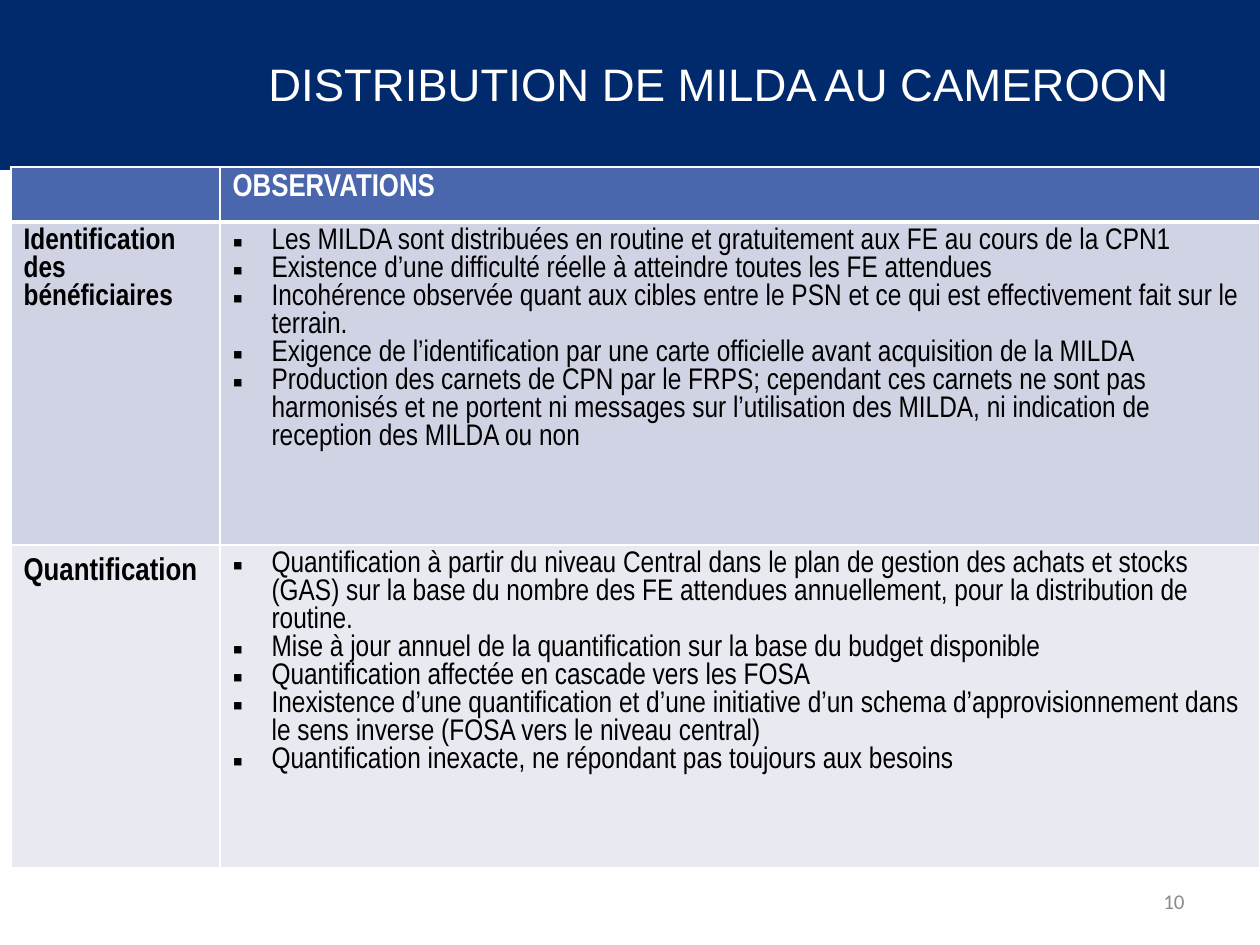
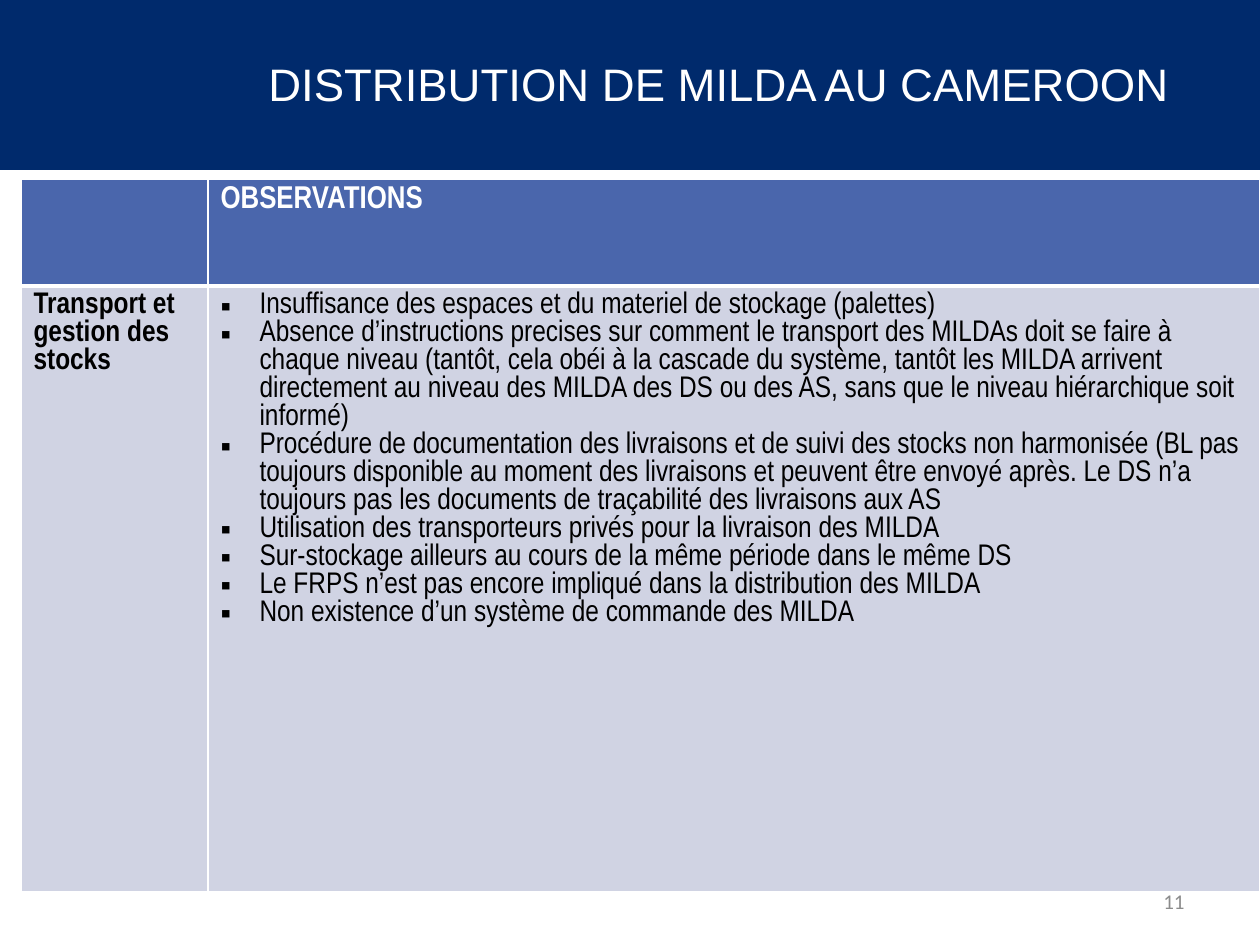
import pptx
import pptx.dml.color
import pptx.enum.shapes
import pptx.enum.text
import pptx.oxml.ns
import pptx.util
from lxml import etree

RGBColor = pptx.dml.color.RGBColor
PP_ALIGN = pptx.enum.text.PP_ALIGN

PX = 914400 // 126
SLIDE_WIDTH, SLIDE_HEIGHT = 1260, 945

NAVY = RGBColor(0x00, 0x2A, 0x6C)
HEADER_BLUE = RGBColor(0x4A, 0x66, 0xAC)
ROW_TINTS = (RGBColor(0xD0, 0xD3, 0xE3), RGBColor(0xE9, 0xEA, 0xF1))
WHITE = RGBColor(0xFF, 0xFF, 0xFF)
BLACK = RGBColor(0x00, 0x00, 0x00)
GREY = RGBColor(0x8C, 0x8C, 0x8C)

TITLE_FONT, TABLE_FONT, NUMBER_FONT = "Arial", "Arial Narrow", "Calibri"
TITLE = "DISTRIBUTION DE MILDA AU CAMEROON"
HEADING = "OBSERVATIONS"
HEADING_SIZE, BODY_SIZE = 18, 17
THIN, THICK = 1, 3
BULLET_INDENT = 39

# Each topic: label, label size, label top margin, observations
IDENTIFICATION = ("Identification des bénéficiaires", 17, 6, [
    "Les MILDA sont distribuées en routine et gratuitement aux FE au cours de la CPN1",
    "Existence d’une difficulté réelle à atteindre toutes les FE attendues",
    "Incohérence observée quant aux cibles entre le PSN et ce qui est effectivement "
    "fait sur le terrain.",
    "Exigence de l’identification par une carte officielle avant acquisition de la MILDA",
    "Production des carnets de CPN par le FRPS; cependant ces carnets ne sont pas "
    "harmonisés et ne portent ni messages sur l’utilisation des MILDA, ni indication de "
    "reception des MILDA ou non",
])
QUANTIFICATION = ("Quantification", 18, 13, [
    "Quantification à partir du niveau Central dans le plan de gestion des achats et "
    "stocks (GAS) sur la base du nombre des FE attendues annuellement, pour la "
    "distribution de routine.",
    "Mise à jour annuel de la quantification sur la base du budget disponible",
    "Quantification affectée en cascade vers les FOSA",
    "Inexistence d’une quantification et d’une initiative d’un schema "
    "d’approvisionnement dans le sens inverse (FOSA vers le niveau central)",
    "Quantification inexacte, ne répondant pas toujours aux besoins",
])
TRANSPORT = ("Transport et gestion des stocks", 17, 6, [
    "Insuffisance des espaces et du materiel de stockage (palettes)",
    "Absence d’instructions precises sur comment le transport des MILDAs doit se faire "
    "à chaque niveau (tantôt, cela obéi à la cascade du système, tantôt les MILDA "
    "arrivent directement au niveau des MILDA des DS ou des AS, sans que le niveau "
    "hiérarchique soit informé)",
    "Procédure de documentation des livraisons et de suivi des stocks non harmonisée "
    "(BL pas toujours disponible au moment des livraisons et peuvent être envoyé après. "
    "Le DS n’a toujours pas les documents de traçabilité des livraisons aux AS",
    "Utilisation des transporteurs privés pour la livraison des MILDA",
    "Sur-stockage ailleurs au cours de la même période dans le même DS",
    "Le FRPS n’est pas encore impliqué dans la distribution des MILDA",
    "Non existence d’un système de commande des MILDA",
])

# Each page: number, table box, label column width, header height, topics
PAGES = [
    (10, (11, 167, 1249, 701), 209, 55, [IDENTIFICATION, QUANTIFICATION]),
    (11, (21, 179, 1239, 713), 187, 107, [TRANSPORT]),
]


def emu(box):
    return [length * PX for length in box]


def add_run(paragraph, text, font, size, color, bold=False):
    run = paragraph.add_run()
    run.text = text
    run.font.name = font
    run.font.size = pptx.util.Pt(size)
    run.font.color.rgb = color
    run.font.bold = bold


def add_line_of_text(slide, box, text, font, size, color, align=PP_ALIGN.LEFT):
    frame = slide.shapes.add_textbox(*emu(box)).text_frame
    frame.word_wrap = True
    frame.vertical_anchor = pptx.enum.text.MSO_ANCHOR.MIDDLE
    frame.paragraphs[0].alignment = align
    add_run(frame.paragraphs[0], text, font, size, color)


def add_title_band(slide, box):
    left, top, width, height = box
    band = slide.shapes.add_shape(pptx.enum.shapes.MSO_SHAPE.RECTANGLE, *emu(box))
    band.shadow.inherit = False
    band.fill.solid()
    band.fill.fore_color.rgb = NAVY
    band.line.color.rgb = NAVY
    band.line.width = pptx.util.Pt(2)
    title_box = (left + 256, top + 4, width - 315, height - 10)
    add_line_of_text(slide, title_box, TITLE, TITLE_FONT, 26, WHITE)


def add_bullet(paragraph):
    properties = paragraph._p.get_or_add_pPr()
    properties.set("marL", str(BULLET_INDENT * PX))
    properties.set("indent", str(-BULLET_INDENT * PX))
    etree.SubElement(properties, pptx.oxml.ns.qn("a:buFont"), typeface="Arial")
    etree.SubElement(properties, pptx.oxml.ns.qn("a:buChar"), char="▪")


def style_cell(cell, fill, top=THIN, bottom=THIN):
    """Draw white borders, with widths in points, then the fill."""
    properties = cell._tc.get_or_add_tcPr()
    for side, width in (("L", THIN), ("R", THIN), ("T", top), ("B", bottom)):
        border = etree.SubElement(properties, pptx.oxml.ns.qn(f"a:ln{side}"),
                                  w=str(pptx.util.Pt(width)))
        paint = etree.SubElement(border, pptx.oxml.ns.qn("a:solidFill"))
        etree.SubElement(paint, pptx.oxml.ns.qn("a:srgbClr"), val=str(WHITE))
    cell.fill.solid()
    cell.fill.fore_color.rgb = fill


def fill_topic_row(label_cell, observations_cell, topic):
    label, label_size, label_margin, observations = topic
    label_cell.margin_top = label_margin * PX
    add_run(label_cell.text_frame.paragraphs[0], label, TABLE_FONT, label_size, BLACK, True)
    frame = observations_cell.text_frame
    for index, observation in enumerate(observations):
        paragraph = frame.add_paragraph() if index else frame.paragraphs[0]
        add_bullet(paragraph)
        add_run(paragraph, observation, TABLE_FONT, BODY_SIZE, BLACK)


def add_observations_table(slide, box, label_width, header_height, topics):
    width, height = box[2:]
    table = slide.shapes.add_table(len(topics) + 1, 2, *emu(box)).table
    table.first_row = table.horz_banding = False
    table.columns[0].width = label_width * PX
    table.columns[1].width = (width - label_width) * PX
    table.rows[0].height = header_height * PX

    for cell in table.rows[0].cells:
        style_cell(cell, HEADER_BLUE, bottom=THICK)
    add_run(table.cell(0, 1).text_frame.paragraphs[0], HEADING, TABLE_FONT,
            HEADING_SIZE, WHITE, True)

    for index, topic in enumerate(topics):
        row = table.rows[index + 1]
        row.height = (height - header_height) * PX // len(topics)
        for cell in row.cells:
            style_cell(cell, ROW_TINTS[index % 2], top=THIN if index else THICK)
        fill_topic_row(*row.cells, topic)


def add_page(deck, number, table_box, label_width, header_height, topics):
    slide = deck.slides.add_slide(deck.slide_layouts[6])
    add_title_band(slide, (0, 0, SLIDE_WIDTH, 168))
    add_line_of_text(slide, (903, 876, 294, 50), str(number), NUMBER_FONT, 12, GREY,
                     PP_ALIGN.RIGHT)
    add_observations_table(slide, table_box, label_width, header_height, topics)


def main():
    deck = pptx.Presentation()
    deck.slide_width, deck.slide_height = emu((SLIDE_WIDTH, SLIDE_HEIGHT))
    for page in PAGES:
        add_page(deck, *page)
    deck.save("out.pptx")


if __name__ == "__main__":
    main()
